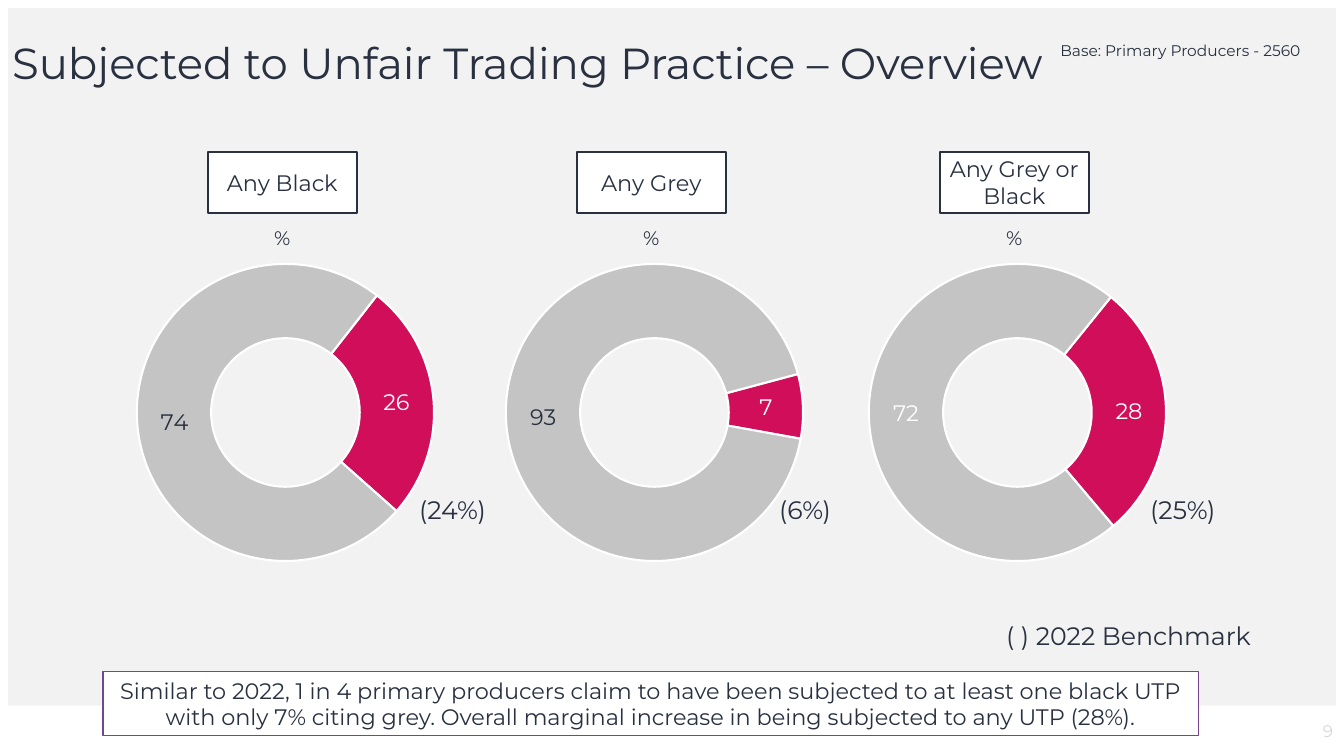
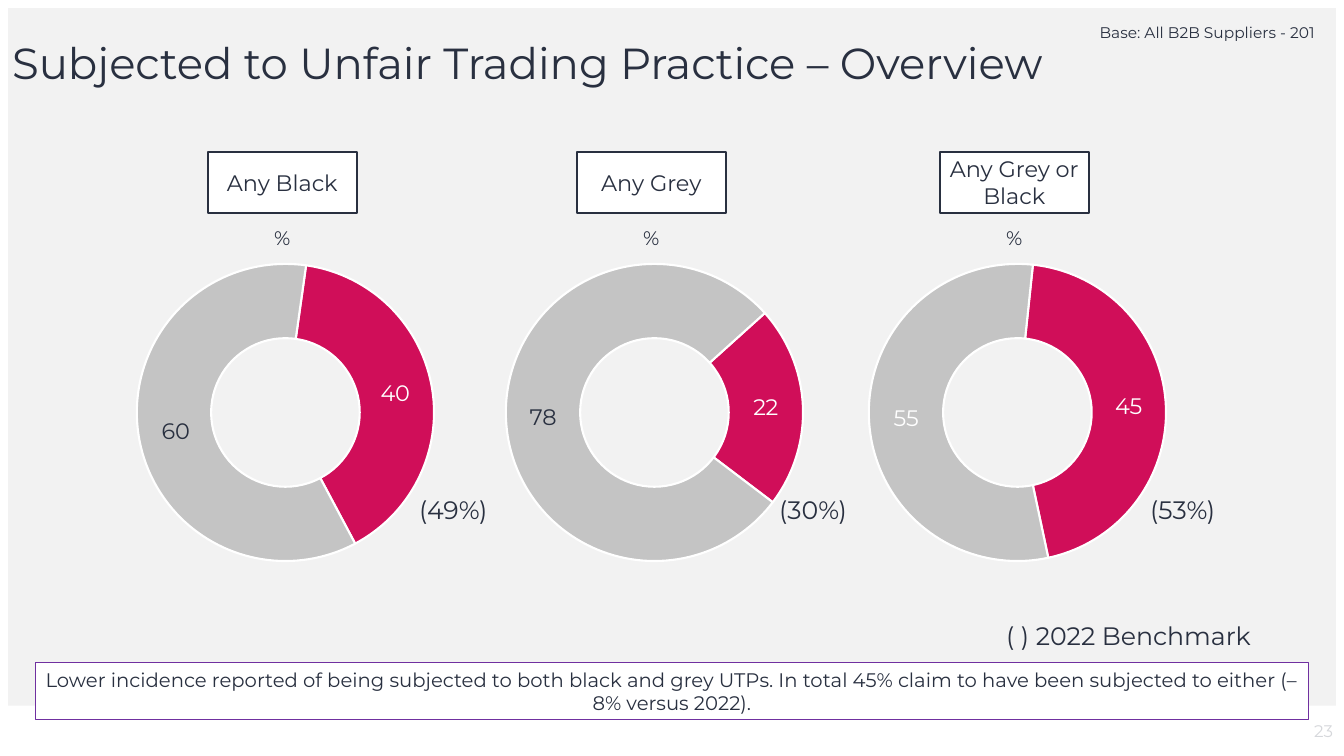
from dataclasses import dataclass

from lxml.etree import SubElement
from pptx import Presentation
from pptx.chart.data import CategoryChartData
from pptx.dml.color import RGBColor
from pptx.enum.chart import XL_CHART_TYPE
from pptx.enum.shapes import MSO_SHAPE
from pptx.enum.text import MSO_ANCHOR, MSO_AUTO_SIZE, PP_ALIGN
from pptx.oxml.ns import qn
from pptx.util import Inches, Pt


@dataclass(frozen=True)
class Theme:
    """Font, colours and type sizes of the deck."""
    font: str = "Montserrat"
    ink: str = "293040"
    panel: str = "F2F2F2"
    white: str = "FFFFFF"
    affected: str = "D00E59"
    unaffected: str = "C4C4C4"
    page_ink: str = "31394C"
    title: int = 31
    benchmark: int = 18
    label: int = 16
    unit: int = 14
    page: int = 12
    base: int = 11


@dataclass(frozen=True)
class Column:
    """One practice type: its heading, chart edge and benchmark edge."""
    heading: str
    left: float
    benchmark_left: float
    rest_ink: str


THEME = Theme()
COLUMNS = (
    Column("Any Black", 0, 4.06, THEME.ink),
    Column("Any Grey", 3.66, 7.63, THEME.ink),
    Column("Any Grey or Black", 7.26, 11.31, THEME.white),
)
TITLE = "Subjected to Unfair Trading Practice – Overview"
CHART_WIDTH, CHART_HEIGHT = 5.2, 3.7
RING_AREA = {"x": 0.261, "y": 0.115, "w": 0.567, "h": 0.885}
RING_CENTRE = 2.8

OVERVIEWS = (
    {
        "page": "9",
        "base": "Base: Primary Producers - 2560",
        "base_at": (10.31, 0.38, 2.69, 0.3),
        "rings": ((26, 38, "(24%)"), (7, 75, "(6%)"), (28, 39, "(25%)")),
        "finding": "Similar to 2022, 1 in 4 primary producers claim to have been "
                   "subjected to at least one black UTP with only 7% citing grey. "
                   "Overall marginal increase in being subjected to any UTP (28%).",
        "finding_at": (1.02, 6.66, 10.87, 0.64),
        "finding_size": 16,
        "finding_line": "784492",
    },
    {
        "page": "23",
        "base": "Base: All B2B Suppliers - 201",
        "base_at": (10.45, 0.2, 2.69, 0.3),
        "rings": ((40, 8, "(49%)"), (22, 48, "(30%)"), (45, 6, "(53%)")),
        "finding": "Lower incidence reported of being subjected to both black and "
                   "grey UTPs. In total 45% claim to have been subjected to either "
                   "(– 8% versus 2022).",
        "finding_at": (0.35, 6.57, 12.63, 0.57),
        "finding_size": 14,
        "finding_line": "7030A0",
    },
)


def rgb(code):
    """Turn a hex code into a colour."""
    return RGBColor.from_string(code)


def style(font, size, color=THEME.ink):
    """Apply the theme font with a size and colour."""
    font.name = THEME.font
    font.size = Pt(size)
    font.color.rgb = rgb(color)


def write(frame, text, size, align=PP_ALIGN.LEFT, color=THEME.ink, spacing=None):
    """Write one run into the first paragraph of a frame."""
    paragraph = frame.paragraphs[0]
    paragraph.alignment = align
    paragraph.line_spacing = spacing
    run = paragraph.add_run()
    run.text = text
    style(run.font, size, color)
    return run


def add_text(slide, at, text, size, align=PP_ALIGN.LEFT, wrap=True, **look):
    """Add a plain text box."""
    frame = slide.shapes.add_textbox(*map(Inches, at)).text_frame
    frame.word_wrap = wrap
    return write(frame, text, size, align, **look)


def add_box(slide, at, fill, line=None, width=1.0):
    """Add a flat rectangle with an optional outline."""
    box = slide.shapes.add_shape(MSO_SHAPE.RECTANGLE, *map(Inches, at))
    box.shadow.inherit = False
    box.fill.solid()
    box.fill.fore_color.rgb = rgb(fill)
    if line:
        box.line.color.rgb = rgb(line)
        box.line.width = Pt(width)
    else:
        box.line.fill.background()
    return box


def add_label_box(slide, at, text, size, line, width):
    """Add an outlined white box with centred text."""
    frame = add_box(slide, at, THEME.white, line, width).text_frame
    frame.word_wrap = True
    frame.vertical_anchor = MSO_ANCHOR.MIDDLE
    write(frame, text, size, PP_ALIGN.CENTER)


def set_ring_geometry(chart, start):
    """Set the start angle, hole size and inner plot area of a doughnut."""
    space = chart._chartSpace
    space.find(".//" + qn("c:firstSliceAng")).set("val", str(start))
    space.find(".//" + qn("c:holeSize")).set("val", "25")
    area = space.find(".//" + qn("c:plotArea"))
    for layout in area.findall(qn("c:layout")):
        area.remove(layout)
    layout = SubElement(area, qn("c:layout"))
    area.insert(0, layout)
    manual = SubElement(layout, qn("c:manualLayout"))
    settings = {"layoutTarget": "inner", "xMode": "edge", "yMode": "edge", **RING_AREA}
    for tag, value in settings.items():
        SubElement(manual, qn("c:" + tag)).set("val", str(value))


def add_ring(slide, left, affected, start, rest_ink):
    """Add a doughnut of the affected share against the rest."""
    data = CategoryChartData()
    data.categories = ["1", "2"]
    data.add_series("Series 1", (affected, 100 - affected))
    at = (left, 2.03, CHART_WIDTH, CHART_HEIGHT)
    chart = slide.shapes.add_chart(XL_CHART_TYPE.DOUGHNUT, *map(Inches, at), data).chart
    chart.has_legend = False
    chart.has_title = False
    style(chart.font, THEME.unit)
    plot = chart.plots[0]
    plot.vary_by_categories = True
    series = plot.series[0]
    labels = series.data_labels
    labels.show_value = True
    labels.show_percentage = False
    style(labels.font, THEME.label, THEME.white)
    shares = ((THEME.affected, THEME.white), (THEME.unaffected, rest_ink))
    for index, (fill, ink) in enumerate(shares):
        point = series.points[index]
        point.format.fill.solid()
        point.format.fill.fore_color.rgb = rgb(fill)
        point.format.line.color.rgb = rgb(THEME.white)
        point.format.line.width = Pt(1.5)
        style(point.data_label.font, THEME.label, ink)
    set_ring_geometry(chart, start)


def add_column(slide, column, affected, start, benchmark):
    """Add a heading, unit, doughnut and benchmark for one practice type."""
    centre = column.left + RING_CENTRE
    add_ring(slide, column.left, affected, start, column.rest_ink)
    add_text(slide, (centre - 0.19, 2.19, 0.38, 0.34), "%", THEME.unit,
             PP_ALIGN.CENTER, wrap=False)
    add_label_box(slide, (centre - 0.74, 1.51, 1.48, 0.6), column.heading,
                  THEME.label, THEME.ink, 1.5)
    add_text(slide, (column.benchmark_left, 4.86, 0.9, 0.4), benchmark, THEME.benchmark)


def add_frame(slide, page):
    """Add the shared panel, title and page number."""
    panel = add_box(slide, (0.08, 0.08, 13.17, 6.92), THEME.panel)
    slide.shapes._spTree.insert(2, panel._element)
    title = slide.shapes.title
    title.left, title.top, title.width, title.height = map(Inches, (0.02, 0.2, 11.68, 0.9))
    frame = title.text_frame
    frame.auto_size = MSO_AUTO_SIZE.NONE
    frame.vertical_anchor = MSO_ANCHOR.MIDDLE
    write(frame, TITLE, THEME.title, spacing=0.9)
    number = add_text(slide, (11.58, 7.1, 1.74, 0.3), page, THEME.page,
                      PP_ALIGN.RIGHT, color=THEME.page_ink)
    ink = number._r.find(".//" + qn("a:srgbClr"))
    SubElement(ink, qn("a:alpha")).set("val", "20000")


def add_overview(deck, overview):
    """Build one overview slide."""
    slide = deck.slides.add_slide(deck.slide_layouts.get_by_name("Title Only"))
    add_frame(slide, overview["page"])
    for column, ring in zip(COLUMNS, overview["rings"]):
        add_column(slide, column, *ring)
    add_text(slide, overview["base_at"], overview["base"], THEME.base,
             PP_ALIGN.RIGHT, spacing=0.9)
    add_text(slide, (9.88, 6.11, 2.86, 0.4), "( ) 2022 Benchmark", THEME.benchmark)
    add_label_box(slide, overview["finding_at"], overview["finding"],
                  overview["finding_size"], overview["finding_line"], 1)


def main():
    """Build and save the deck."""
    deck = Presentation()
    deck.slide_width, deck.slide_height = Inches(13.33), Inches(7.5)
    for overview in OVERVIEWS:
        add_overview(deck, overview)
    deck.save("out.pptx")


if __name__ == "__main__":
    main()
